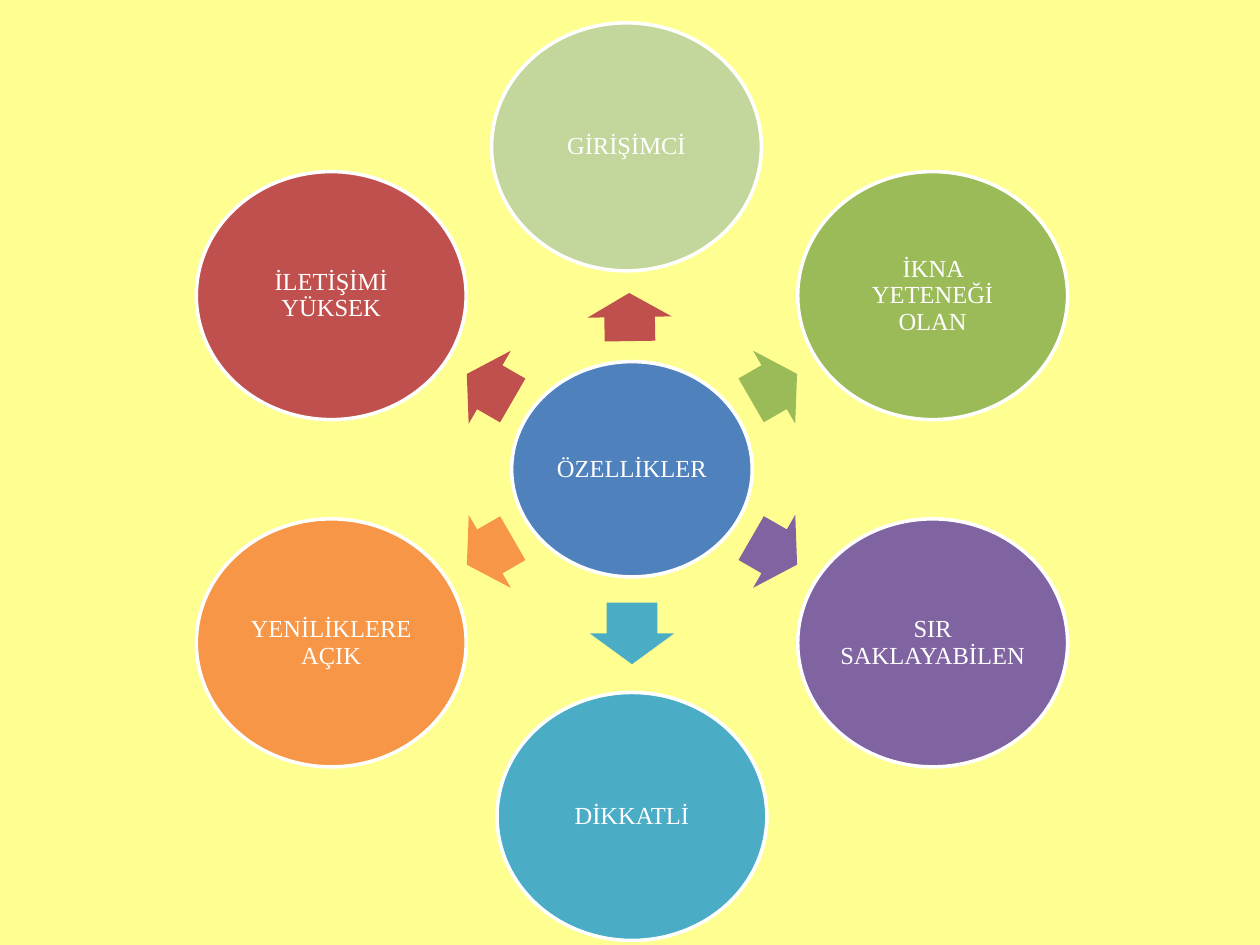
from dataclasses import dataclass
from math import cos, radians, sin

from pptx import Presentation
from pptx.dml.color import RGBColor
from pptx.enum.shapes import MSO_SHAPE as Shape
from pptx.enum.text import MSO_ANCHOR as Anchor, PP_ALIGN as Align
from pptx.util import Cm, Pt


@dataclass(frozen=True)
class Theme:
    background: str = "FFFF91"
    white: str = "FFFFFF"
    blue: str = "4F81BD"
    red: str = "C0504D"
    pale_green: str = "C3D69B"
    green: str = "9BBB59"
    purple: str = "8064A2"
    teal: str = "4BACC6"
    orange: str = "F79646"
    font: str = "Times New Roman"
    text_size: int = 14
    outline: int = 2


@dataclass(frozen=True)
class Box:
    left: float
    top: float
    width: float
    height: float

    def at(self, angle, radius, shift=(0, 0)):
        """Point at a clockwise angle and radius from the middle of the box."""
        return (self.left + self.width / 2 + radius * cos(radians(angle)) + shift[0],
                self.top + self.height / 2 + radius * sin(radians(angle)) + shift[1])


@dataclass(frozen=True)
class Trait:
    text: str
    angle: float
    fill: str
    arrow_fill: str
    arrow_length: float = 1.07
    arrow_radius: float = 3.31
    shift: tuple = (0, 0)


THEME = Theme()
DIAGRAM = Box(3.94, 0, 17.6, 18.92)
HUB_SIZE = (4.85, 4.34)
TRAIT_SIZE = (5.44, 5)
TRAIT_RADIUS = 7
ARROW_THICKNESS = 1.7
INSET = 0.05

TRAITS = [
    Trait("GİRİŞİMCİ", 269.1, THEME.pale_green, THEME.red, 0.97, 3.07, (0, 0.5)),
    Trait("İKNA YETENEĞİ OLAN", 330, THEME.green, THEME.green),
    Trait("SIR SAKLAYABİLEN", 30, THEME.purple, THEME.purple),
    Trait("DİKKATLİ", 90, THEME.teal, THEME.teal, 1.24),
    Trait("YENİLİKLERE AÇIK", 150, THEME.orange, THEME.orange),
    Trait("İLETİŞİMİ YÜKSEK", 210, THEME.red, THEME.red),
]


def set_all(target, values):
    for name, value in values.items():
        setattr(target, name, value)


def add_centred(slide, kind, centre, size, fill):
    (x, y), (width, height) = centre, size
    shape = slide.shapes.add_shape(kind, Cm(x - width / 2), Cm(y - height / 2),
                                   Cm(width), Cm(height))
    shape.shadow.inherit = False
    shape.fill.solid()
    shape.fill.fore_color.rgb = RGBColor.from_string(fill)
    return shape


def add_circle(slide, centre, size, fill, text):
    circle = add_centred(slide, Shape.OVAL, centre, size, fill)
    white = RGBColor.from_string(THEME.white)
    circle.line.color.rgb = white
    circle.line.width = Pt(THEME.outline)
    frame = circle.text_frame
    margins = {f"margin_{side}": Cm(INSET) for side in ("left", "top", "right", "bottom")}
    set_all(frame, {"word_wrap": True, "vertical_anchor": Anchor.MIDDLE, **margins})
    paragraph = frame.paragraphs[0]
    set_all(paragraph, {"alignment": Align.CENTER, "line_spacing": 0.9})
    run = paragraph.add_run()
    run.text = text
    set_all(run.font, {"name": THEME.font, "size": Pt(THEME.text_size)})
    run.font.color.rgb = white


def add_arrow(slide, centre, length, angle, fill):
    arrow = add_centred(slide, Shape.RIGHT_ARROW, centre, (length, ARROW_THICKNESS), fill)
    arrow.line.fill.background()
    arrow.rotation = angle
    arrow.adjustments[0] = 0.6
    arrow.adjustments[1] = 0.5


def add_radial_diagram(slide, box, hub_text, traits):
    # Hub
    add_circle(slide, box.at(0, 0), HUB_SIZE, THEME.blue, hub_text)
    # Arrows and surrounding traits
    for trait in traits:
        add_arrow(slide, box.at(trait.angle, trait.arrow_radius),
                  trait.arrow_length, trait.angle, trait.arrow_fill)
        add_circle(slide, box.at(trait.angle, TRAIT_RADIUS, trait.shift),
                   TRAIT_SIZE, trait.fill, trait.text)


def main():
    presentation = Presentation()
    set_all(presentation, {"slide_width": Cm(25.4), "slide_height": Cm(19.05)})
    slide = presentation.slides.add_slide(presentation.slide_layouts[6])
    # Background
    background = slide.background.fill
    background.solid()
    background.fore_color.rgb = RGBColor.from_string(THEME.background)
    add_radial_diagram(slide, DIAGRAM, "ÖZELLİKLER", TRAITS)
    presentation.save("out.pptx")


if __name__ == "__main__":
    main()
